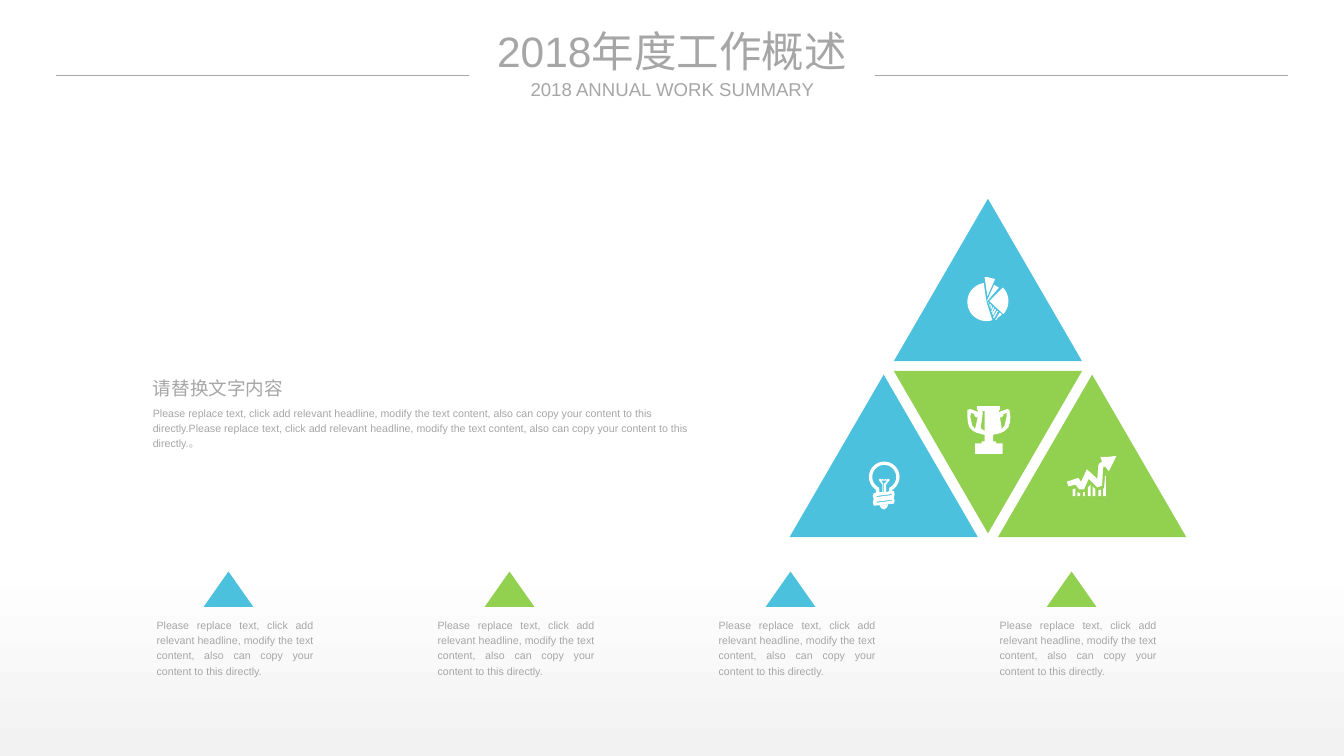
from math import cos, radians, sin

from pptx import Presentation
from pptx.dml.color import RGBColor
from pptx.enum.shapes import MSO_CONNECTOR, MSO_SHAPE
from pptx.enum.text import MSO_ANCHOR, MSO_AUTO_SIZE, PP_ALIGN
from pptx.oxml.ns import qn
from pptx.util import Inches, Pt

TRIANGLE, STRAIGHT = MSO_SHAPE.ISOSCELES_TRIANGLE, MSO_CONNECTOR.STRAIGHT
LEFT, CENTER, JUSTIFY = PP_ALIGN.LEFT, PP_ALIGN.CENTER, PP_ALIGN.JUSTIFY
TOP, MIDDLE = MSO_ANCHOR.TOP, MSO_ANCHOR.MIDDLE
NO_FIT = MSO_AUTO_SIZE.NONE

THEME = {
    "font": "Arial", "title": 32, "heading": 14, "body": 8,
    "grey": RGBColor(0xA6, 0xA6, 0xA6), "blue": RGBColor(0x4B, 0xC1, 0xDD),
    "green": RGBColor(0x92, 0xD0, 0x50), "white": RGBColor(0xFF, 0xFF, 0xFF),
    "shade": RGBColor(0xF2, 0xF2, 0xF2),
}

TITLE = "2018年度工作概述"
SUBTITLE = "2018 ANNUAL WORK SUMMARY"
HEADING = "请替换文字内容"
SENTENCE = ("Please replace text, click add relevant headline, modify the text content, "
            "also can copy your content to this directly.")
SUMMARY = SENTENCE * 2 + "。"
COLUMN_COLORS = ["blue", "green", "blue", "green"]


def arc(cx, cy, radius, start, end, steps=32):
    """Points on a circle between two angles in degrees, clockwise from the right."""
    angles = [radians(start + (end - start) * i / steps) for i in range(steps + 1)]
    return [(cx + radius * cos(a), cy + radius * sin(a)) for a in angles]


def bar(left, right, top_left, top_right):
    return [(left, 42), (right, 42), (right, top_right), (left, top_left)]


# Icon outlines, in hundredths of an inch from the top left of each icon
TROPHY = [
    [(11, 4), (11, 6), (3, 3), (0, 4), (0, 11), (0.5, 17), (2, 22), (6, 26), (10, 28),
     (18, 30), (18, 37), (15, 37), (15, 39), (8, 39), (8, 50), (37, 50), (37, 39),
     (30, 39), (30, 37), (27, 37), (27, 30), (35, 28), (39, 26), (43, 22), (44.5, 17),
     (45, 11), (44, 4), (42, 3), (33, 6), (33, 4), (34, 4), (34, 0), (10, 0), (10, 4)],
    [(36, 24), (34, 11), (35, 12), (38, 10), (37, 9), (41, 7), (41, 11), (39, 20)],
    [(11, 11), (8, 24), (5, 20), (3, 11), (4, 7), (8, 9), (7, 10), (10, 12)],
    [(18, 5), (18, 26), (14, 23), (16, 8), (16, 5)],
]
PIE = [
    [(23, 25)] + arc(23, 25, 20, -45, 43),
    [(28, 8), (20, 26)] + arc(20, 26, 20, 262, 72) + [(20, 26), (33, 11)],
    [(21, 0), (18, 0), (21, 20), (29, 2)],
    [(36, 39), (33, 42), (35, 38)],
    [(31, 44), (35, 38), (34, 37), (29, 45)],
    [(28, 43), (32, 36), (31, 35), (27, 42)],
    [(27, 40), (30, 34), (29, 33), (26, 38)],
    [(26, 37), (28, 32), (27, 31), (25, 36)],
    [(25, 34), (26, 30), (26, 29), (24, 32)],
    [(23, 31), (25, 29), (24, 28), (23, 29)],
    [(22, 28), (22, 26), (23, 27)],
]
GROWTH = [
    [(52, 0), (44, 16), (40, 11), (38, 12), (37, 31), (32, 33), (23, 24), (18, 35),
     (13, 35), (9, 30), (2, 32), (0, 27), (12, 23), (15, 27), (21, 14), (32, 24),
     (33, 10), (34, 8), (37, 6), (35, 1), (43, 1)],
    [(38, 42), (41, 42), (41, 21), (40, 21), (39, 34), (38, 34)],
    bar(6, 9, 35, 34), bar(11, 14, 38, 39), bar(17, 19, 38, 38),
    bar(22, 25, 33, 30), bar(27, 30, 32, 35), bar(33, 36, 36, 35),
]
BULB = [
    arc(16, 16, 16, 57, -238) + [
        (7, 33), (5, 33), (4, 36), (5, 39), (4, 43), (5, 46), (7, 46), (26, 44),
        (27, 41), (26, 38), (27, 34), (26, 31), (24, 31)],
    arc(16, 16, 12.5, 65, -245) + [
        (11, 32), (14, 32), (14, 24), (10, 19), (12, 18), (13, 19), (14, 18), (15, 19),
        (16, 19), (17, 18), (18, 19), (20, 18), (22, 19), (18, 24), (18, 32), (21, 31)],
    [(19, 20), (13, 20), (15, 23), (15, 32), (16, 32), (16, 23)],
    [(20, 45), (11, 46), (13, 49), (16, 50), (19, 48)],
    [(24, 40), (8, 42), (8, 43), (24, 41)],
    [(24, 34), (8, 36), (8, 37), (24, 35)],
]

# Triangle left and top, colour, rotation, icon, icon left and top
PYRAMID = [
    (9.35, 3.88, "green", 180, TROPHY, 10.12, 4.25),
    (9.35, 2.08, "blue", 0, PIE, 10.12, 2.9),
    (10.44, 3.92, "green", 0, GROWTH, 11.16, 4.77),
    (8.26, 3.92, "blue", 0, BULB, 9.09, 4.83),
]


def paint(sp, color):
    sp.shadow.inherit = False
    sp.fill.solid()
    sp.fill.fore_color.rgb = THEME[color]
    sp.line.fill.background()


def add_triangle(s, x, y, w, h, color, rotation=0):
    sp = s.shapes.add_shape(TRIANGLE, Inches(x), Inches(y), Inches(w), Inches(h))
    sp.rotation = rotation
    paint(sp, color)


def add_icon(s, contours, x, y):
    units = [[(px * 10, py * 10) for px, py in contour] for contour in contours]
    builder = s.shapes.build_freeform(*units[0][0], scale=Inches(1) / 1000)
    builder.add_line_segments(units[0][1:], close=True)
    for contour in units[1:]:
        builder.move_to(*contour[0])
        builder.add_line_segments(contour[1:], close=True)
    paint(builder.convert_to_shape(Inches(x), Inches(y)), "white")


def write(s, text, x, y, w, h, sp=None, size="body", align=LEFT, spacing=1.2,
          anchor=TOP, inset=True, wrap=True):
    """Place text in the given placeholder, or in a new text box."""
    box = Inches(x), Inches(y), Inches(w), Inches(h)
    sp = sp or s.shapes.add_textbox(*box)
    sp.left, sp.top, sp.width, sp.height = box
    tf = sp.text_frame
    tf.word_wrap, tf.auto_size, tf.vertical_anchor = wrap, NO_FIT, anchor
    if not inset:
        tf.margin_left = tf.margin_right = tf.margin_top = tf.margin_bottom = 0
    p = tf.paragraphs[0]
    p.alignment, p.line_spacing = align, spacing
    r = p.add_run()
    r.text = text
    r.font.name, r.font.size = THEME["font"], Pt(THEME[size])
    r.font.color.rgb = THEME["grey"]


def add_rule(s, x, y, length):
    line = s.shapes.add_connector(STRAIGHT, Inches(x), Inches(y), Inches(x + length), Inches(y))
    line.line.color.rgb = THEME["grey"]
    line.line.width = Pt(1)
    sp_pr = line._element.spPr
    sp_pr.append(sp_pr.makeelement(qn("a:effectLst"), {}))


def shade_background(s):
    fill = s.background.fill
    fill.gradient()
    fill.gradient_angle = 90
    for stop, position, color in zip(fill.gradient_stops, (0, 0.26), ("shade", "white")):
        stop.position = position
        stop.color.rgb = THEME[color]


def main():
    prs = Presentation()
    prs.slide_width, prs.slide_height = Inches(14.06), Inches(7.91)
    s = prs.slides.add_slide(prs.slide_layouts[5])
    shade_background(s)

    header = dict(align=CENTER, spacing=1.0, anchor=MIDDLE, inset=False)
    write(s, TITLE, 4.87, 0.26, 4.32, 0.54, sp=s.shapes.title, size="title", **header)
    write(s, SUBTITLE, 5.5, 0.81, 3.07, 0.24, size="heading", **header)
    for x in (0.59, 9.15):
        add_rule(s, x, 0.79, 4.32)

    for x, y, color, rotation, icon, icon_x, icon_y in PYRAMID:
        add_triangle(s, x, y, 1.97, 1.7, color, rotation)
        add_icon(s, icon, icon_x, icon_y)

    write(s, HEADING, 1.5, 3.85, 1.58, 0.36, size="heading", wrap=False)
    write(s, SUMMARY, 1.5, 4.18, 6.11, 0.59)

    for i, color in enumerate(COLUMN_COLORS):
        offset = i * 2.94
        add_triangle(s, 2.13 + offset, 5.98, 0.52, 0.37, color)
        write(s, SENTENCE, 1.54 + offset, 6.4, 1.84, 0.73, align=JUSTIFY)

    prs.save("out.pptx")


if __name__ == "__main__":
    main()
